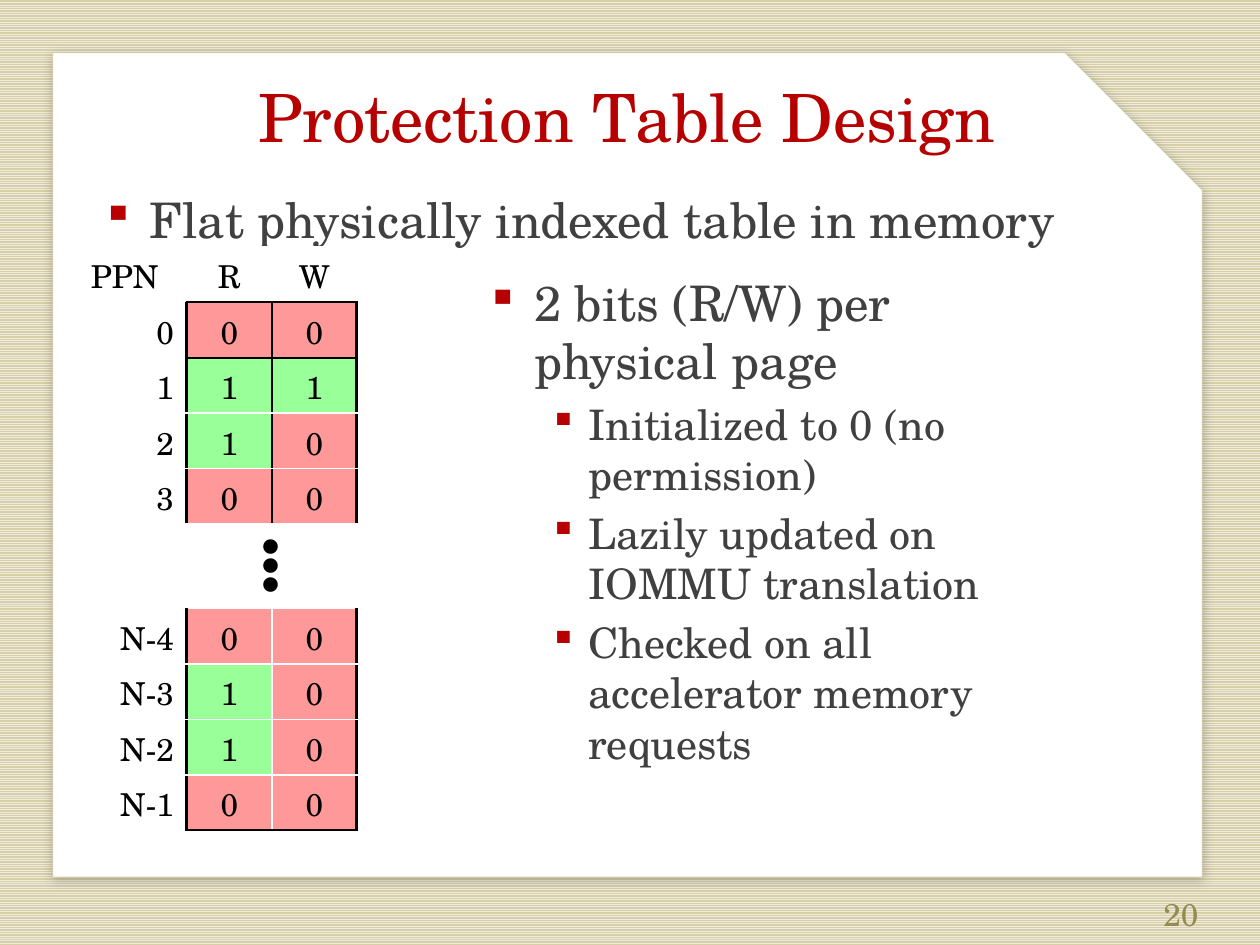
import pptx
import pptx.util
import pptx.dml.color
import pptx.enum.dml
import pptx.enum.shapes
import pptx.enum.text
import pptx.oxml
import pptx.oxml.ns
from lxml import etree

Inches = pptx.util.Inches
Pt = pptx.util.Pt
RGBColor = pptx.dml.color.RGBColor
ALIGN = pptx.enum.text.PP_ALIGN
qn = pptx.oxml.ns.qn

SERIF = "TeX Gyre Schola"
RED = RGBColor(0xB7, 0x00, 0x00)
GRAY = RGBColor(0x40, 0x40, 0x40)
BLACK = RGBColor(0x00, 0x00, 0x00)
WHITE = RGBColor(0xFF, 0xFF, 0xFF)
CREAM = RGBColor(0xEE, 0xEC, 0xE1)
SAND = RGBColor(0xD8, 0xCF, 0xA7)
OLIVE = RGBColor(0x94, 0x8A, 0x54)
BIT_FILLS = {"0": RGBColor(0xFF, 0x99, 0x99), "1": RGBColor(0x99, 0xFF, 0x99)}

COLUMN_WIDTHS = [0.98, 0.68, 0.67]
ROW_HEIGHT = 0.44
BULLET_LEVELS = [
    {"margin": 0.38, "indent": -0.38, "size": 28, "before": 24},
    {"margin": 0.81, "indent": -0.31, "size": 24, "before": 4.8},
]

FIRST_ROWS = [("PPN", "R", "W"), ("0", "0", "0"), ("1", "1", "1"), ("2", "1", "0"), ("3", "0", "0")]
LAST_ROWS = [("N-4", "0", "0"), ("N-3", "1", "0"), ("N-2", "1", "0"), ("N-1", "0", "0")]


def add_element(parent, tag, **attributes):
    element = etree.SubElement(parent, qn(tag))
    for key, value in attributes.items():
        element.set(key, str(value))
    return element


def style_font(font, size, color, name=SERIF):
    font.name = name
    font.size = Pt(size)
    font.color.rgb = color


def style_frame(frame, inset=None):
    frame.word_wrap = True
    if inset is not None:
        frame.margin_left = frame.margin_top = Inches(inset)
        frame.margin_right = frame.margin_bottom = Inches(inset)


def paint_background(page):
    fill = page.background.fill
    fill.patterned()
    fill.pattern = pptx.enum.dml.MSO_PATTERN.NARROW_HORIZONTAL
    fill.fore_color.rgb = CREAM
    fill.back_color.rgb = SAND


def add_panel(page):
    panel = page.shapes.add_shape(
        pptx.enum.shapes.MSO_SHAPE.SNIP_1_RECTANGLE,
        Inches(0.42), Inches(0.42), Inches(9.12), Inches(6.54))
    panel.fill.solid()
    panel.fill.fore_color.rgb = WHITE
    panel.line.color.rgb = SAND
    panel.line.width = Pt(0.25)
    panel.shadow.inherit = False
    effects = panel._element.spPr.find(qn("a:effectLst"))
    shadow = add_element(effects, "a:outerShdw", blurRad=Pt(6), dist=Pt(2),
                         dir=80 * 60000, algn="tl", rotWithShape=0)
    color = add_element(shadow, "a:srgbClr", val=BLACK)
    add_element(color, "a:alpha", val=22000)
    page.shapes.title._element.addprevious(panel._element)


def fill_title(page, text):
    title = page.shapes.title
    title.left, title.top = Inches(0.42), Inches(0.6)
    title.width, title.height = Inches(9.11), Inches(0.74)
    frame = title.text_frame
    style_frame(frame, 0)
    frame.vertical_anchor = pptx.enum.text.MSO_ANCHOR.TOP
    frame.text = text
    para = frame.paragraphs[0]
    para.alignment = ALIGN.CENTER
    style_font(para.runs[0].font, 38, RED)


def add_bullets(page, left, top, width, height, items):
    box = page.shapes.add_textbox(Inches(left), Inches(top), Inches(width), Inches(height))
    frame = box.text_frame
    style_frame(frame, 0)
    for index, (level, text) in enumerate(items):
        para = frame.paragraphs[0] if index == 0 else frame.add_paragraph()
        para.text = text
        para.level = level
        look = BULLET_LEVELS[level]
        if index:
            para.space_before = Pt(look["before"])
        properties = para._p.get_or_add_pPr()
        properties.set("marL", str(Inches(look["margin"])))
        properties.set("indent", str(Inches(look["indent"])))
        add_element(add_element(properties, "a:buClr"), "a:srgbClr", val=RED)
        add_element(properties, "a:buSzPct", val=90000)
        add_element(properties, "a:buChar", char="▪")
        style_font(para.runs[0].font, look["size"], GRAY)


def add_label(page, left, top, width, height, text, color, alignment=ALIGN.LEFT, name=SERIF):
    box = page.shapes.add_textbox(Inches(left), Inches(top), Inches(width), Inches(height))
    frame = box.text_frame
    style_frame(frame)
    frame.text = text
    para = frame.paragraphs[0]
    para.alignment = alignment
    style_font(para.runs[0].font, 18, color, name)
    return box


def set_borders(cell, black_sides):
    properties = cell._tc.get_or_add_tcPr()
    for side in "LRTB":
        is_black = side in black_sides
        line = add_element(properties, "a:ln" + side, w=Pt(1.5 if is_black else 1))
        color = BLACK if is_black else WHITE
        add_element(add_element(line, "a:solidFill"), "a:srgbClr", val=color)


def black_sides(row, column, row_count, has_header):
    if has_header and row == 0:
        return "B" if column else ""
    if column == 0:
        return "R"
    sides = "LR" if has_header or column == 2 else "L"
    if not has_header and column == 2:
        sides = "R"
    if has_header and row == 1:
        sides += "TB"
    if has_header and row == 2:
        sides += "T"
    if not has_header and row == row_count - 1:
        sides += "B"
    return sides


def add_bit_table(page, top, rows, has_header):
    frame = page.shapes.add_table(
        len(rows), len(COLUMN_WIDTHS), Inches(0.5), Inches(top),
        Inches(sum(COLUMN_WIDTHS)), Inches(ROW_HEIGHT * len(rows)))
    table = frame.table
    table.first_row = table.horz_banding = False
    for column, width in zip(table.columns, COLUMN_WIDTHS):
        column.width = Inches(width)
    for row, values in enumerate(rows):
        table.rows[row].height = Inches(ROW_HEIGHT)
        is_header = has_header and row == 0
        for column, value in enumerate(values):
            cell = table.cell(row, column)
            cell.text = value
            para = cell.text_frame.paragraphs[0]
            para.alignment = ALIGN.CENTER if column or is_header else ALIGN.RIGHT
            style_font(para.runs[0].font, 18, BLACK)
            set_borders(cell, black_sides(row, column, len(rows), has_header))
            if column or is_header:
                cell.fill.solid()
                cell.fill.fore_color.rgb = WHITE if is_header else BIT_FILLS[value]
            else:
                cell.fill.background()


def main():
    deck = pptx.Presentation()
    deck.slide_width, deck.slide_height = Inches(10), Inches(7.5)
    page = deck.slides.add_slide(deck.slide_layouts[5])
    paint_background(page)
    add_panel(page)
    fill_title(page, "Protection Table Design")
    add_bullets(page, 0.81, 1.5, 8.36, 4.99, [(0, "Flat physically indexed table in memory")])
    number = add_label(page, 7.28, 7.05, 2.33, 0.4, "20", OLIVE, ALIGN.RIGHT)
    number.text_frame.vertical_anchor = pptx.enum.text.MSO_ANCHOR.MIDDLE
    add_bullets(page, 3.86, 2.16, 4.75, 4.42, [
        (0, "2 bits (R/W) per physical page"),
        (1, "Initialized to 0 (no permission)"),
        (1, "Lazily updated on IOMMU translation"),
        (1, "Checked on all accelerator memory requests"),
    ])
    dots = add_label(page, 1.84, 4.3, 0.67, 0.4, "●●●", BLACK, name="Calibri")
    dots.text_frame.word_wrap = False
    dots.rotation = 90
    add_bit_table(page, 1.96, FIRST_ROWS, True)
    add_bit_table(page, 4.83, LAST_ROWS, False)
    deck.save("out.pptx")


if __name__ == "__main__":
    main()
